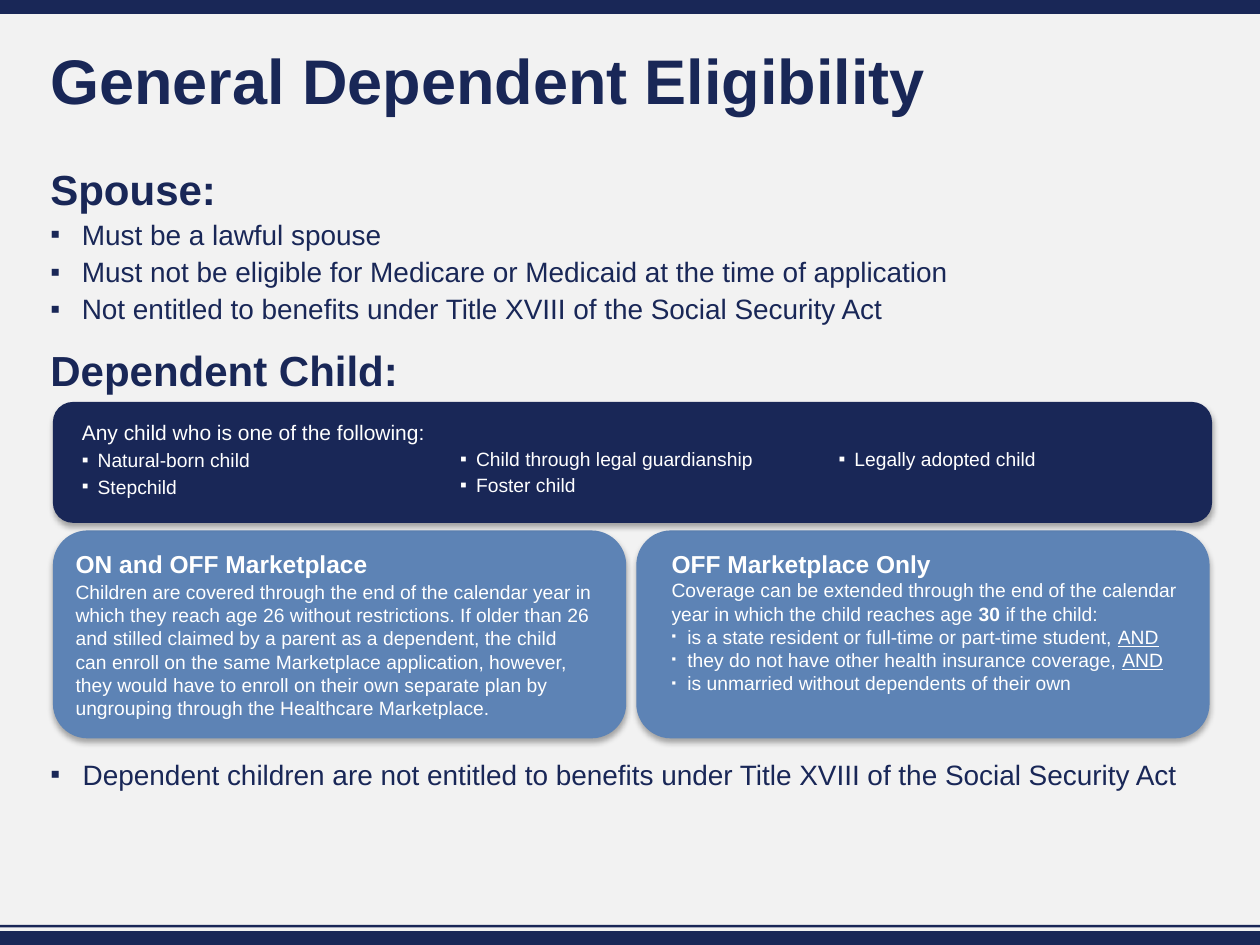
from lxml.etree import SubElement
from pptx import Presentation
from pptx.dml.color import RGBColor
from pptx.enum.shapes import MSO_SHAPE
from pptx.enum.text import MSO_ANCHOR, PP_ALIGN
from pptx.oxml.ns import qn
from pptx.util import Pt

NAVY = RGBColor(0x19, 0x27, 0x57)
STEEL = RGBColor(0x5D, 0x83, 0xB5)
WHITE = RGBColor(0xFF, 0xFF, 0xFF)
PALE = RGBColor(0xF2, 0xF2, 0xF2)

TITLE = "General Dependent Eligibility"
SPOUSE_RULES = [
    "Must be a lawful spouse",
    "Must not be eligible for Medicare or Medicaid at the time of application",
    "Not entitled to benefits under Title XVIII of the Social Security Act",
]
CHILD_INTRO = "Any child who is one of the following:"
CHILD_COLUMNS = [
    ["Natural-born child", "Stepchild"],
    ["Child through legal guardianship", "Foster child"],
    ["Legally adopted child"],
]
ON_OFF_TEXT = (
    "Children are covered through the end of the calendar year in which they reach age 26 "
    "without restrictions. If older than 26 and stilled claimed by a parent as a dependent, "
    "the child can enroll on the same Marketplace application, however, they would have to "
    "enroll on their own separate plan by ungrouping through the Healthcare Marketplace."
)
OFF_ONLY_TEXT = [
    ("Coverage can be extended through the end of the calendar year in which the child reaches age ", ""),
    ("30 ", "bold"),
    ("if the child:", ""),
]
OFF_ONLY_RULES = [
    [("is a state resident or full-time or part-time student, ", ""), ("AND", "underline")],
    [("they do not have other health insurance coverage, ", ""), ("AND", "underline")],
    [("is unmarried without dependents of their own", "")],
]
FOOTNOTE = "Dependent children are not entitled to benefits under Title XVIII of the Social Security Act"

WIDTH, HEIGHT = 720, 540
MARGIN = 28.8
CARD_LEFT, CARD_WIDTH, CARD_TOP, CARD_HEIGHT = 30.24, 327.6, 303.12, 118.8
CARD_PITCH = 333.36
COLUMN_LEFT, COLUMN_PITCH, COLUMN_GAP = 46.8, 216.24, 14.4


def add_panel(slide, kind, color, left, top, width, height):
    panel = slide.shapes.add_shape(kind, Pt(left), Pt(top), Pt(width), Pt(height))
    panel.fill.solid()
    panel.fill.fore_color.rgb = color
    panel.line.fill.background()
    panel.shadow.inherit = False
    return panel


def add_card(slide, color, left, top, width, height):
    card = add_panel(slide, MSO_SHAPE.ROUNDED_RECTANGLE, color, left, top, width, height)
    effects = card._element.spPr.find(qn("a:effectLst"))
    shadow = SubElement(effects, qn("a:outerShdw"), blurRad=str(Pt(3.5)),
                        dist=str(Pt(2.2)), dir="5400000", rotWithShape="0")
    black = SubElement(shadow, qn("a:srgbClr"), val="000000")
    SubElement(black, qn("a:alpha"), val="32000")


def add_text(slide, left, top, width, height):
    frame = slide.shapes.add_textbox(Pt(left), Pt(top), Pt(width), Pt(height)).text_frame
    frame.word_wrap = True
    frame.vertical_anchor = MSO_ANCHOR.TOP
    frame.margin_left = frame.margin_right = frame.margin_top = frame.margin_bottom = 0
    return frame


def write(frame, content, size, color, bold=False, indent=0, bullet_size=100, before=0, after=0):
    first = frame.paragraphs[0]
    is_first = not first.runs
    paragraph = first if is_first else frame.add_paragraph()
    paragraph.alignment = PP_ALIGN.LEFT
    paragraph.space_before = Pt(0 if is_first else before)
    paragraph.space_after = Pt(after)
    if indent:
        properties = paragraph._p.get_or_add_pPr()
        properties.set("marL", str(Pt(indent)))
        properties.set("indent", str(-Pt(indent)))
        SubElement(properties, qn("a:buSzPct"), val=str(bullet_size * 1000))
        SubElement(properties, qn("a:buFont"), typeface="Arial")
        SubElement(properties, qn("a:buChar"), char="▪")
    font = paragraph.font
    font.name, font.size, font.bold = "Arial", Pt(size), bold
    font.color.rgb = color
    for words, style in [(content, "")] if isinstance(content, str) else content:
        run = paragraph.add_run()
        run.text = words
        if style == "bold":
            run.font.bold = True
        elif style == "underline":
            run.font.underline = True
    return paragraph


def main():
    deck = Presentation()
    deck.slide_width, deck.slide_height = Pt(WIDTH), Pt(HEIGHT)
    slide = deck.slides.add_slide(deck.slide_layouts[6])
    slide.background.fill.solid()
    slide.background.fill.fore_color.rgb = PALE

    for top, height in [(0, 7.92), (532.08, 7.92), (528.48, 1.44)]:
        add_panel(slide, MSO_SHAPE.RECTANGLE, NAVY, 0, top, WIDTH, height)

    title = add_text(slide, MARGIN, 28.8, 662.4, 44.64)
    write(title, TITLE, 36, NAVY, bold=True).line_spacing = 0.9

    body = add_text(slide, MARGIN, 93.6, 662.4, 343.44)
    write(body, "Spouse:", 24, NAVY, bold=True, after=1)
    for rule in SPOUSE_RULES:
        write(body, rule, 16, NAVY, indent=18, before=1, after=1)
    write(body, "Dependent Child:", 24, NAVY, bold=True, before=10)

    for position in range(2):
        add_card(slide, STEEL, CARD_LEFT + position * CARD_PITCH, CARD_TOP, CARD_WIDTH, CARD_HEIGHT)
    add_card(slide, NAVY, CARD_LEFT, 229.68, 662.4, 69.12)

    for position, children in enumerate(CHILD_COLUMNS):
        top = 255.4 if position else 239.76
        column = add_text(slide, COLUMN_LEFT + position * COLUMN_PITCH, top,
                          COLUMN_PITCH - COLUMN_GAP, 285.84 - top)
        if position == 0:
            write(column, CHILD_INTRO, 12, WHITE, after=1)
        for child in children:
            write(column, child, 11, WHITE, indent=9, before=1, after=1)

    on_off = add_text(slide, 43.2, 313.92, 295.2, 100.8)
    write(on_off, "ON and OFF Marketplace", 14, WHITE, bold=True)
    write(on_off, ON_OFF_TEXT, 11, WHITE, before=1, after=1)

    off_only = add_text(slide, 383.76, 313.92, 297.36, 83.52)
    write(off_only, "OFF Marketplace Only", 14, WHITE, bold=True)
    write(off_only, OFF_ONLY_TEXT, 11, WHITE)
    for rule in OFF_ONLY_RULES:
        write(off_only, rule, 11, WHITE, indent=9, bullet_size=67)

    footnote = add_text(slide, MARGIN, 432.72, 652.32, 19.44)
    write(footnote, FOOTNOTE, 16, NAVY, indent=18.5)

    deck.save("out.pptx")


if __name__ == "__main__":
    main()
